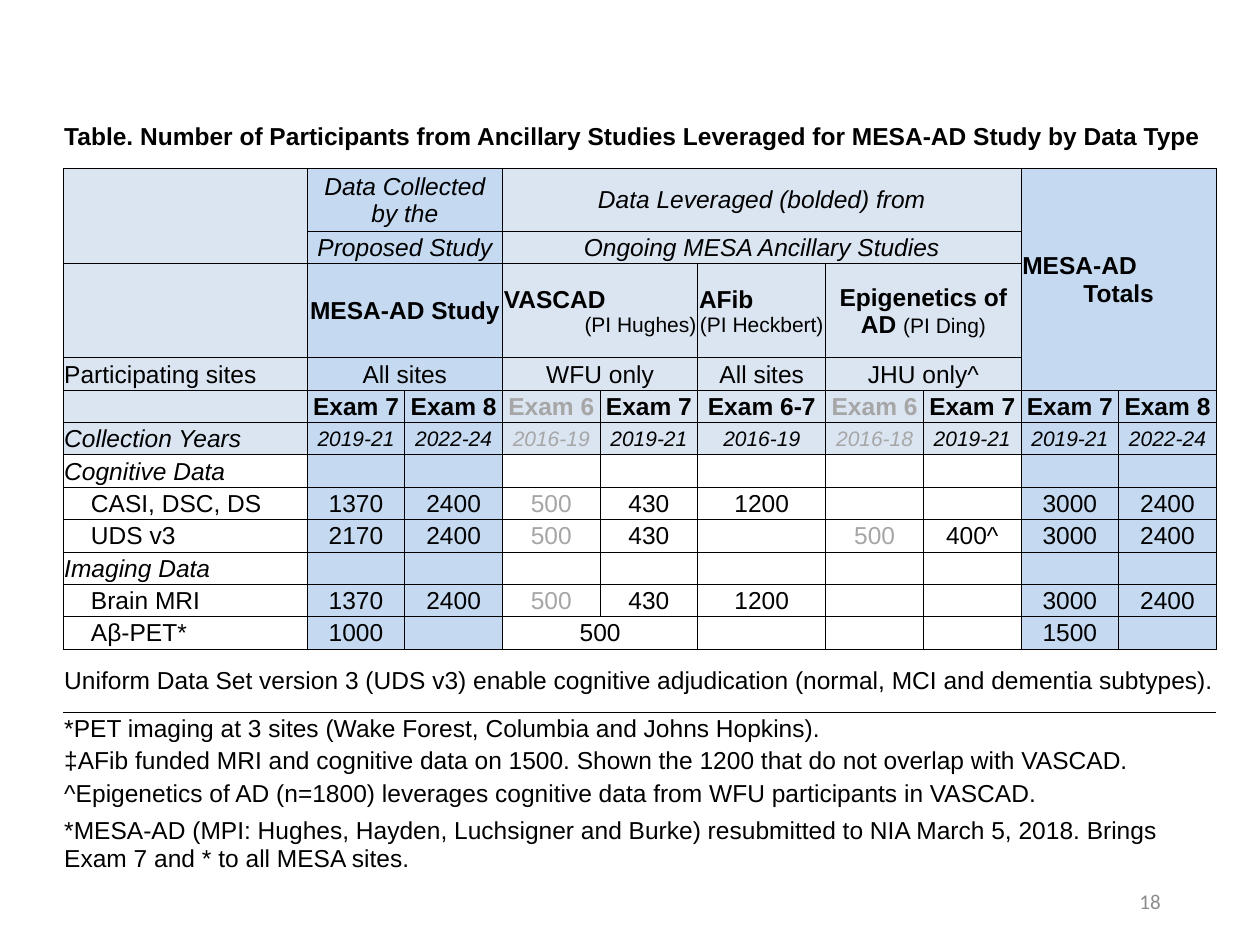
from lxml import etree
from pptx import Presentation
from pptx.dml.color import RGBColor
from pptx.enum.text import MSO_ANCHOR, PP_ALIGN
from pptx.oxml.ns import qn
from pptx.util import Pt

LEFT, CENTER, RIGHT = PP_ALIGN.LEFT, PP_ALIGN.CENTER, PP_ALIGN.RIGHT
MIDDLE, BOTTOM = MSO_ANCHOR.MIDDLE, MSO_ANCHOR.BOTTOM
BLACK, GREY, PALE, BLUE = "000000", "A6A6A6", "DBE5F1", "C5D9F1"
NO_STYLE = "{2D5ABB26-0587-4C30-8999-92F81FD0307C}"


def color(value):
    return RGBColor.from_string(value)


def add_text(para, text, align, values):
    para.alignment = align
    span = para.add_run()
    span.text = text
    settings = {"name": "Arial", "size": 14, "bold": False, "italic": False, "color": BLACK} | values
    span.font.color.rgb = color(settings.pop("color"))
    settings["size"] = Pt(settings["size"])
    for name, value in settings.items():
        setattr(span.font, name, value)


rows = [
    ["Table. Number of Participants from Ancillary Studies Leveraged for MESA-AD Study by Data Type"],
    ["", "Data Collected by the", "", "Data Leveraged (bolded) from"],
    ["", "Proposed Study", "", "Ongoing MESA Ancillary Studies"],
    ["", "MESA-AD Study"],
    ["Participating sites", "All sites", "", "WFU only", "", "All sites", "JHU only^"],
    ["", "Exam 7", "Exam 8", "Exam 6", "Exam 7", "Exam 6-7", "Exam 6", "Exam 7", "Exam 7", "Exam 8"],
    ["Collection Years", "2019-21", "2022-24", "2016-19", "2019-21", "2016-19", "2016-18", "2019-21",
     "2019-21", "2022-24"],
    ["Cognitive Data"],
    ["CASI, DSC, DS", "1370", "2400", "500", "430", "1200", "", "", "3000", "2400"],
    ["UDS v3", "2170", "2400", "500", "430", "", "500", "400^", "3000", "2400"],
    ["Imaging Data"],
    ["Brain MRI", "1370", "2400", "500", "430", "1200", "", "", "3000", "2400"],
    ["Aβ-PET*", "1000", "", "500", "", "", "", "", "1500"],
    ["Uniform Data Set version 3 (UDS v3) enable cognitive adjudication (normal, MCI and dementia subtypes)."],
    ["*PET imaging at 3 sites (Wake Forest, Columbia and Johns Hopkins)."],
    ["‡AFib funded MRI and cognitive data on 1500. Shown the 1200 that do not overlap with VASCAD."],
    ["^Epigenetics of AD (n=1800) leverages cognitive data from WFU participants in VASCAD."],
    ["*MESA-AD (MPI: Hughes, Hayden, Luchsigner and Burke) resubmitted to NIA March 5, 2018. "
     "Brings Exam 7 and * to all MESA sites."],
]
strong, small = {"bold": True}, {"size": 12}
mixed_cells = {
    (1, 8): [[("MESA-AD", LEFT, strong)], [("Totals", CENTER, strong)]],
    (3, 3): [[("VASCAD", LEFT, strong)], [("(PI Hughes)", RIGHT, small)]],
    (3, 5): [[("AFib", LEFT, strong)], [("(PI Heckbert)", CENTER, small)]],
    (3, 6): [[("Epigenetics of AD ", CENTER, strong), ("(PI Ding)", CENTER, small)]],
}
merges = [(row, 0, row, 9) for row in (0, 13, 14, 15, 16, 17)]
merges += [(row, 1, row, 2) for row in (1, 2, 3, 4)]
merges += [(row, 3, row, 7) for row in (1, 2)]
merges += [(row, column, row, column + 1) for row in (3, 4) for column in (3, 6)]
merges += [(1, 0, 2, 0), (1, 8, 4, 9), (12, 3, 12, 4)]
widths = [139.6] + [55.8] * 4 + [73.2] + [55.8] * 4
heights = [36.25, 36.25, 18.5, 53.75] + [18.5] * 9 + [36.25] + [18.5] * 3 + [36.25]

deck = Presentation()
deck.slide_width, deck.slide_height = Pt(720), Pt(540)
page = deck.slides.add_slide(deck.slide_layouts[6])

box = page.shapes.add_textbox(Pt(508.3), Pt(500.4), Pt(162), Pt(28.8))
box.text_frame.word_wrap = True
box.text_frame.vertical_anchor = MIDDLE
add_text(box.text_frame.paragraphs[0], "18", RIGHT, {"name": "Calibri", "size": 12, "color": "8C8C8C"})

frame = page.shapes.add_table(len(rows), len(widths), Pt(36), Pt(59.8), Pt(sum(widths)), Pt(sum(heights)))
table = frame.table
table.first_row = table.horz_banding = False
frame._element.find(".//" + qn("a:tableStyleId")).text = NO_STYLE
for column, width in zip(table.columns, widths):
    column.width = Pt(width)
for row, height in zip(table.rows, heights):
    row.height = Pt(height)
for top, left, bottom, right in merges:
    table.cell(top, left).merge(table.cell(bottom, right))

for row, texts in enumerate(rows):
    in_grid = 1 <= row <= 12
    sides = ["lnL", "lnR", "lnT", "lnB"] if in_grid else {0: ["lnB"], 13: ["lnT"]}.get(row, [])
    for column in range(len(widths)):
        cell = table.cell(row, column)
        cell.vertical_anchor = BOTTOM if row == 17 else MIDDLE
        indented = column == 0 and row in (8, 9, 11, 12)
        cell.margin_left = Pt(16) if indented else Pt(0.72)
        cell.margin_right = cell.margin_top = Pt(0.72)
        cell.margin_bottom = Pt(0)
        for side in sides:
            line = etree.SubElement(cell._tc.get_or_add_tcPr(), qn("a:" + side), w=str(Pt(0.5)))
            paint = etree.SubElement(line, qn("a:solidFill"))
            etree.SubElement(paint, qn("a:srgbClr"), val=BLACK)
        shade = BLUE if column in (1, 2, 8, 9) else PALE if row <= 6 else None
        if in_grid and shade:
            cell.fill.solid()
            cell.fill.fore_color.rgb = color(shade)
        else:
            cell.fill.background()

        text = texts[column] if column < len(texts) else ""
        values = {
            "bold": row in (0, 3, 5),
            "italic": row in (1, 2, 6, 7, 10),
            "size": 12 if row == 6 and column else 14,
            "color": GREY if column in (3, 6) and 5 <= row <= 11 else BLACK,
        }
        plain = [[(text, CENTER if column else LEFT, values)]] if text else []
        paragraphs = mixed_cells.get((row, column), plain)
        for index, spans in enumerate(paragraphs):
            para = cell.text_frame.add_paragraph() if index else cell.text_frame.paragraphs[0]
            for span in spans:
                add_text(para, *span)
        if not paragraphs:
            etree.SubElement(cell.text_frame.paragraphs[0]._p, qn("a:endParaRPr"), sz="1200")

deck.save("out.pptx")
